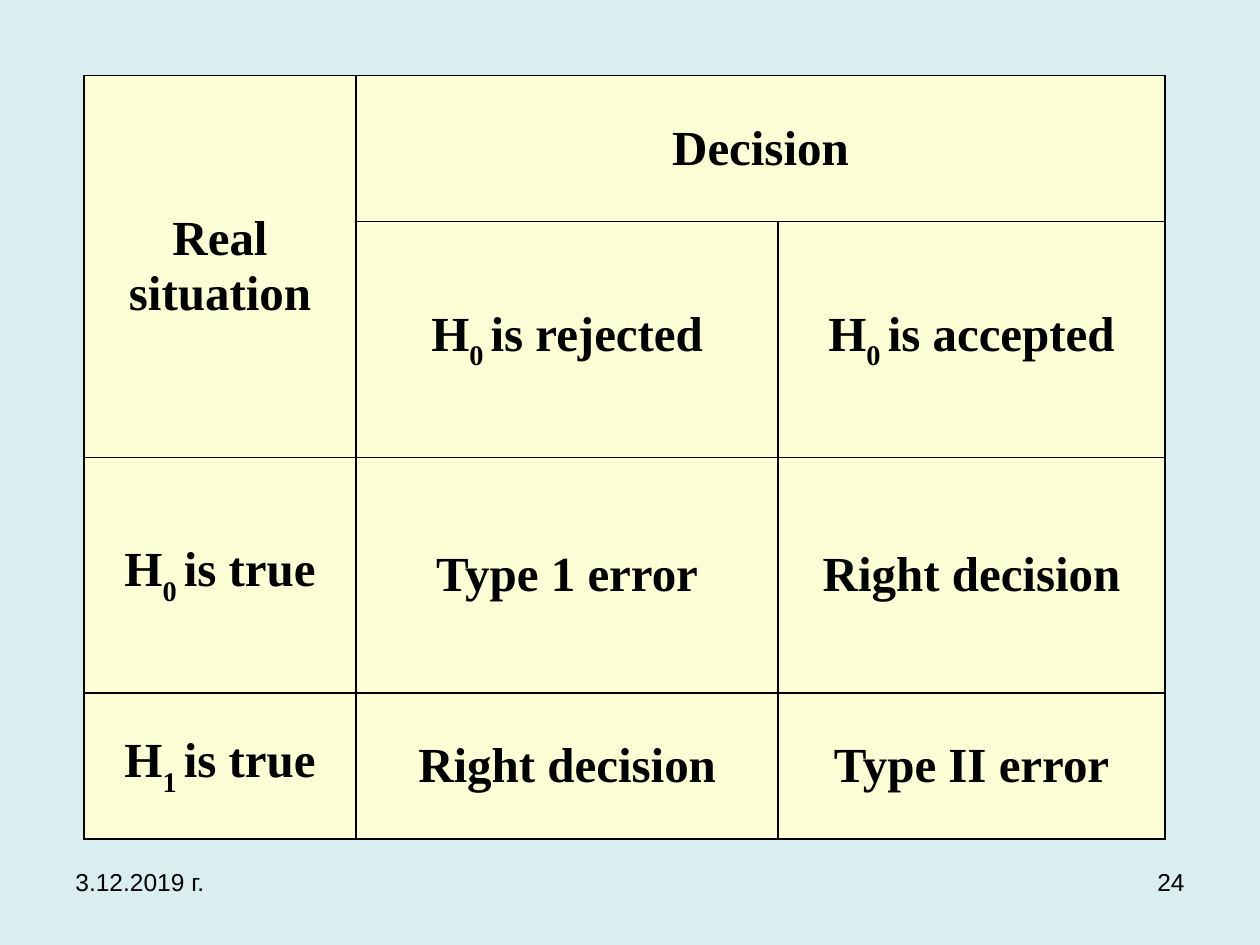
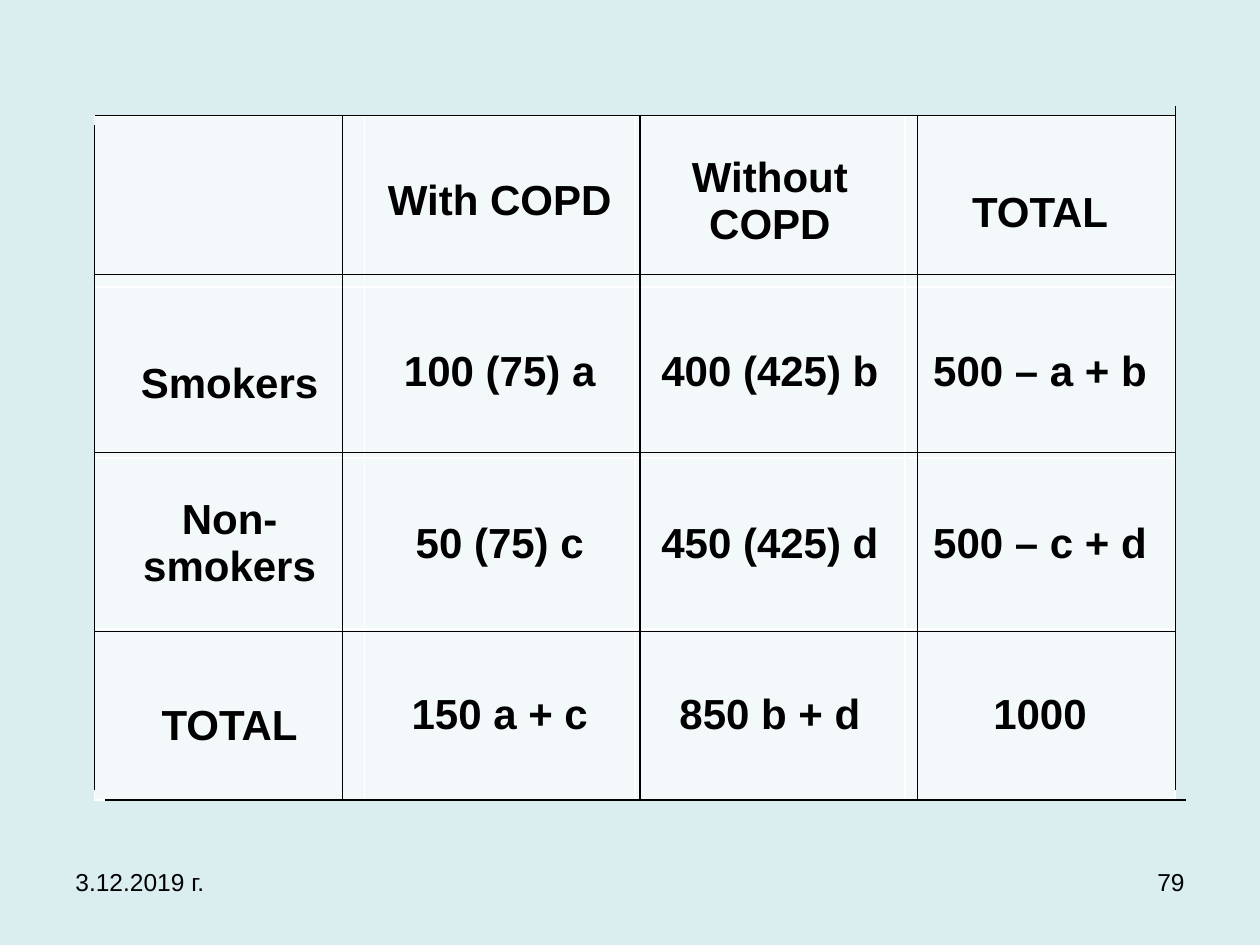
from dataclasses import dataclass

from lxml import etree
from pptx import Presentation
from pptx.dml.color import RGBColor
from pptx.enum import shapes, text
from pptx.oxml import ns
from pptx.util import Pt


@dataclass(frozen=True)
class Theme:
    background: str = "DAEDEF"
    ink: str = "000000"
    border_light: str = "FFFFFF"
    decision_fill: str = "FCFFD5"
    counts_fill: str = "F3F9FA"
    sans: str = "Arial"
    serif: str = "Times New Roman"
    footer_size: float = 14
    counts_size: float = 24
    decision_size: float = 28
    border_width: float = 1
    rule_width: float = 0.75


@dataclass(frozen=True)
class TableStyle:
    fill: str
    border: str
    font: str
    size: float
    insets: tuple[float, float] = (7.2, 3.6)  # horizontal, vertical


@dataclass(frozen=True)
class Grid:
    left: float
    top: float
    cols: list[float]
    rows: list[float]


@dataclass(frozen=True)
class Rule:
    x1: float
    y1: float
    x2: float
    y2: float


THEME = Theme()
DATE = "3.12.2019 г."
SUBSCRIPT = "-30000"

# Decision table: "_" puts the next character below the line
DECISION_STYLE = TableStyle(THEME.decision_fill, THEME.ink, THEME.serif, THEME.decision_size)
DECISION_GRID = Grid(48, 43.2, [155.5, 241.2, 221], [83.5, 134.7, 134.7, 83.5])
DECISION_ROWS = [
    ["Real situation", "Decision", ""],
    ["", "H_0 is rejected", "H_0 is accepted"],
    ["H_0 is true", "Type 1 error", "Right decision"],
    ["H_1 is true", "Right decision", "Type II error"],
]
DECISION_MERGES = [((0, 0), (1, 0)), ((0, 1), (0, 2))]

# Counts table: an em space parts each count from its letter
COUNTS_STYLE = TableStyle(THEME.counts_fill, THEME.border_light, THEME.sans,
                          THEME.counts_size, (5, 0))
COUNTS_GRID = Grid(54, 66.2, [154.4] * 4, [97.75] * 4)
COUNTS_ROWS = [
    ["", "With COPD", "Without COPD", "TOTAL"],
    ["Smokers", "100 (75) a", "400 (425) b", "500 – a + b"],
    ["Non-smokers", "50 (75) c", "450 (425) d", "500 – c + d"],
    ["TOTAL", "150 a + c", "850 b + d", "1000"],
]
COUNTS_LOOSE = [(0, 3), (1, 0), (3, 0)]  # cells with 1.5 line spacing

# Hand-drawn rules over the counts table
LEFT, RIGHT, TOP, BOTTOM = 54, 671.8, 66.2, 457.2
COUNTS_RULES = [
    *(Rule(LEFT, y, RIGHT, y) for y in (TOP, 157, 258.5, 360.7)),
    Rule(LEFT + 6, BOTTOM, RIGHT + 6, BOTTOM),
    Rule(LEFT, 71.3, LEFT, 451.4),
    *(Rule(x, TOP, x, BOTTOM) for x in (195.8, 365.8, 524.2)),
    Rule(RIGHT, 60.5, RIGHT, 451.4),
]


def rgb(value: str) -> RGBColor:
    return RGBColor.from_string(value)


def format_run(r, font: str, size: float, bold: bool = False) -> None:
    r.font.name = font
    r.font.size = Pt(size)
    r.font.bold = bold
    r.font.color.rgb = rgb(THEME.ink)


def add_footer_text(s, content: str, left: float, align) -> None:
    sp = s.shapes.add_textbox(Pt(left), Pt(491.8), Pt(168), Pt(37.5))
    tf = sp.text_frame
    tf.word_wrap = True
    tf.text = content
    p = tf.paragraphs[0]
    p.alignment = align
    format_run(p.runs[0], THEME.sans, THEME.footer_size)


def add_slide(prs, number: int):
    s = prs.slides.add_slide(prs.slide_layouts[6])
    add_footer_text(s, DATE, 36, text.PP_ALIGN.LEFT)
    add_footer_text(s, str(number), 516, text.PP_ALIGN.RIGHT)
    return s


def set_borders(cell, color: str) -> None:
    props = cell._tc.get_or_add_tcPr()
    for i, side in enumerate(("lnL", "lnR", "lnT", "lnB")):
        line = etree.Element(ns.qn(f"a:{side}"), w=str(Pt(THEME.border_width)))
        fill = etree.SubElement(line, ns.qn("a:solidFill"))
        etree.SubElement(fill, ns.qn("a:srgbClr"), val=color)
        props.insert(i, line)


def write_cell(cell, content: str, style: TableStyle) -> None:
    p = cell.text_frame.paragraphs[0]
    p.alignment = text.PP_ALIGN.CENTER
    head, _, tail = content.partition("_")
    for part, lowered in ((head, False), (tail[:2], True), (tail[2:], False)):
        if part:
            r = p.add_run()
            r.text = part
            format_run(r, style.font, style.size, bold=True)
            if lowered:
                r.font._element.set("baseline", SUBSCRIPT)


def add_table(s, grid: Grid, rows: list[list[str]], style: TableStyle):
    table = s.shapes.add_table(len(grid.rows), len(grid.cols), Pt(grid.left), Pt(grid.top),
                               Pt(sum(grid.cols)), Pt(sum(grid.rows))).table
    table.first_row = table.horz_banding = False
    for col, width in zip(table.columns, grid.cols):
        col.width = Pt(width)
    for row, height, contents in zip(table.rows, grid.rows, rows):
        row.height = Pt(height)
        for cell, content in zip(row.cells, contents):
            cell.fill.solid()
            cell.fill.fore_color.rgb = rgb(style.fill)
            cell.vertical_anchor = text.MSO_ANCHOR.MIDDLE
            cell.margin_left = cell.margin_right = Pt(style.insets[0])
            cell.margin_top = cell.margin_bottom = Pt(style.insets[1])
            set_borders(cell, style.border)
            write_cell(cell, content, style)
    return table


def add_rule(s, rule: Rule) -> None:
    sp = s.shapes.add_connector(shapes.MSO_CONNECTOR.STRAIGHT, Pt(rule.x1), Pt(rule.y1),
                                Pt(rule.x2), Pt(rule.y2))
    sp.line.color.rgb = rgb(THEME.ink)
    sp.line.width = Pt(THEME.rule_width)
    etree.SubElement(sp._element.spPr, ns.qn("a:effectLst"))


def build_decision_slide(prs) -> None:
    s = add_slide(prs, 24)
    table = add_table(s, DECISION_GRID, DECISION_ROWS, DECISION_STYLE)
    for first, last in DECISION_MERGES:
        table.cell(*first).merge(table.cell(*last))


def build_counts_slide(prs) -> None:
    s = add_slide(prs, 79)
    table = add_table(s, COUNTS_GRID, COUNTS_ROWS, COUNTS_STYLE)
    for position in COUNTS_LOOSE:
        table.cell(*position).text_frame.paragraphs[0].line_spacing = 1.5
    for rule in COUNTS_RULES:
        add_rule(s, rule)


def main() -> None:
    prs = Presentation()
    prs.slide_width, prs.slide_height = Pt(720), Pt(540)
    # Shared background
    fill = prs.slide_master.background.fill
    fill.solid()
    fill.fore_color.rgb = rgb(THEME.background)
    build_decision_slide(prs)
    build_counts_slide(prs)
    prs.save("out.pptx")


if __name__ == "__main__":
    main()
